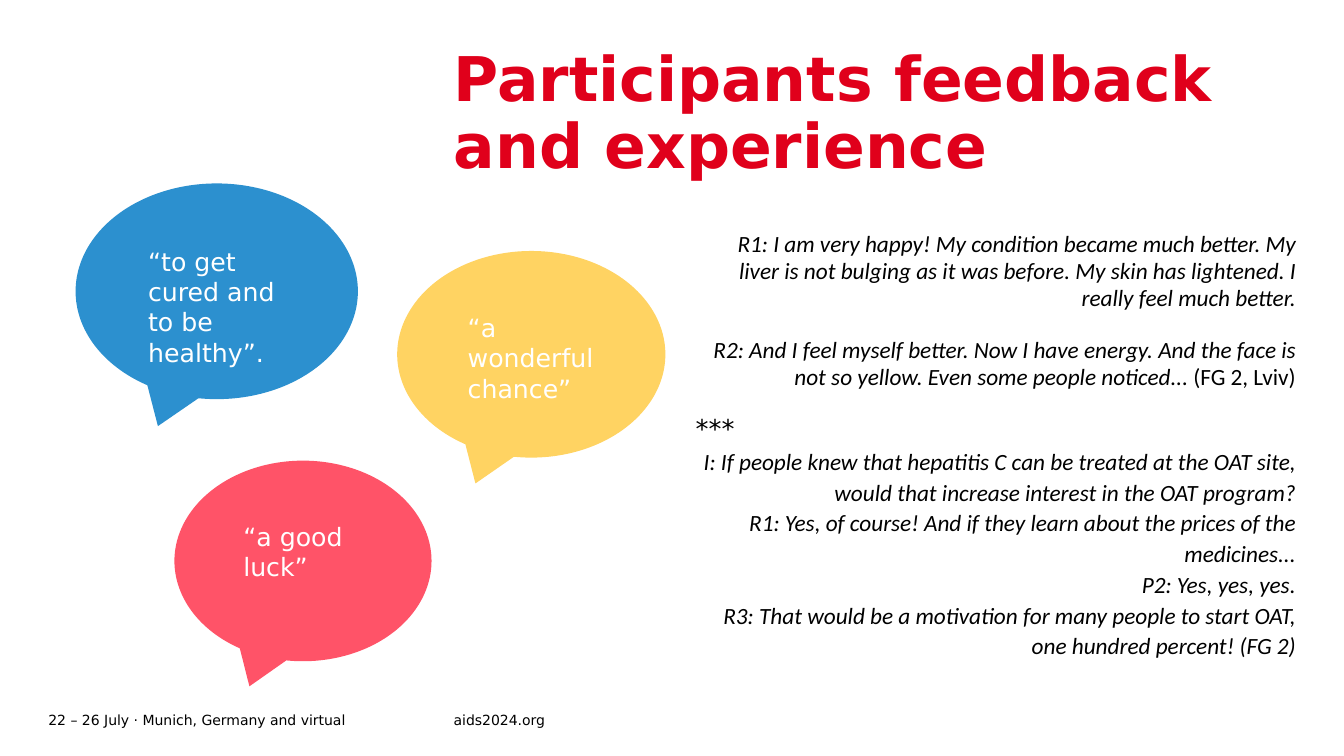
from pptx import Presentation
from pptx.dml.color import RGBColor
from pptx.enum.shapes import MSO_SHAPE
from pptx.enum.text import MSO_ANCHOR, PP_ALIGN
from pptx.util import Inches, Pt

# Content
SANS, SERIF_FREE = "DejaVu Sans", "Calibri"
TITLE = "Participants feedback and experience"

# Text, fill, (left, top, width, height)
BUBBLES = [
    ("“to get cured and to be healthy”.", "2C90CF", (0.75, 1.82, 2.8, 2.14)),
    ("“a good luck”", "FF5368", (1.73, 4.57, 2.55, 1.99)),
    ("“a wonderful chance”", "FFD362", (3.94, 2.49, 2.66, 2.05)),
]

# Spoken words, upright source note
ANSWERS = [
    ("R1: I am very happy! My condition became much better. My liver is not "
     "bulging as it was before. My skin has lightened. I really feel much better.", ""),
    ("R2: And I feel myself better. Now I have energy. And the face is not so "
     "yellow. Even some people noticed...", " (FG 2, Lviv)"),
]
SEPARATOR = "***"
DIALOGUE = [
    "I: If people knew that hepatitis C can be treated at the OAT site, "
    "would that increase interest in the OAT program?",
    "R1: Yes, of course! And if they learn about the prices of the medicines...",
    "P2: Yes, yes, yes.",
    "R3: That would be a motivation for many people to start OAT, "
    "one hundred percent! (FG 2)",
]
FOOTERS = [
    ("22 – 26 July · Munich, Germany and virtual", (0.48, 7.02, 4.02, 0.24)),
    ("aids2024.org", (4.5, 7.02, 1.93, 0.24)),
]


def color(hex_value):
    return RGBColor.from_string(hex_value)


def style(paragraph, size, ink="000000", face=SANS, bold=False, italic=False,
          align=PP_ALIGN.LEFT, spacing=1.0, before=0, after=0):
    paragraph.alignment = align
    paragraph.line_spacing = spacing
    paragraph.space_before, paragraph.space_after = Pt(before), Pt(after)
    font = paragraph.font
    font.name, font.size, font.bold, font.italic = face, Pt(size), bold, italic
    font.color.rgb = color(ink)


def set_frame(frame, inset=0, anchor=MSO_ANCHOR.TOP):
    frame.word_wrap = True
    frame.vertical_anchor = anchor
    frame.margin_left = frame.margin_right = Inches(inset)
    frame.margin_top = frame.margin_bottom = Inches(inset)
    return frame


def add_text(box, anchor=MSO_ANCHOR.TOP):
    return set_frame(slide.shapes.add_textbox(*map(Inches, box)).text_frame, anchor=anchor)


def add_quote(words, note="", **look):
    paragraph = quotes.add_paragraph() if quotes.text else quotes.paragraphs[0]
    paragraph.add_run().text = words
    if note:
        source = paragraph.add_run()
        source.text = note
        source.font.italic = False
    style(paragraph, **look)


deck = Presentation()
deck.slide_width, deck.slide_height = Inches(13.33), Inches(7.5)
slide = deck.slides.add_slide(deck.slide_layouts[6])

# Footer
for words, box in FOOTERS:
    footer = add_text(box, MSO_ANCHOR.MIDDLE)
    footer.text = words
    style(footer.paragraphs[0], 10)

# Interview quotes
quotes = add_text((6.9, 2.29, 5.95, 4.49))
spoken = dict(size=16.6, face=SERIF_FREE, italic=True, align=PP_ALIGN.RIGHT)
for index, (words, note) in enumerate(ANSWERS):
    add_quote(words, note, spacing=0.97, before=10 if index else 0, after=8, **spoken)
add_quote(SEPARATOR, size=18.5, spacing=0.9, before=10)
for words in DIALOGUE:
    add_quote(words, spacing=1.1, **spoken)

# Title
title = add_text((4.5, 0.48, 8.35, 1.34))
title.text = TITLE
style(title.paragraphs[0], 44, "E0001B", bold=True, spacing=0.9)

# Speech bubbles
for words, fill, box in BUBBLES:
    bubble = slide.shapes.add_shape(MSO_SHAPE.OVAL_CALLOUT, *map(Inches, box))
    bubble.shadow.inherit = False
    bubble.fill.solid()
    bubble.fill.fore_color.rgb = color(fill)
    bubble.line.fill.background()
    saying = set_frame(bubble.text_frame, inset=0.31)
    saying.text = words
    style(saying.paragraphs[0], 18, "FFFFFF")

deck.save("out.pptx")
